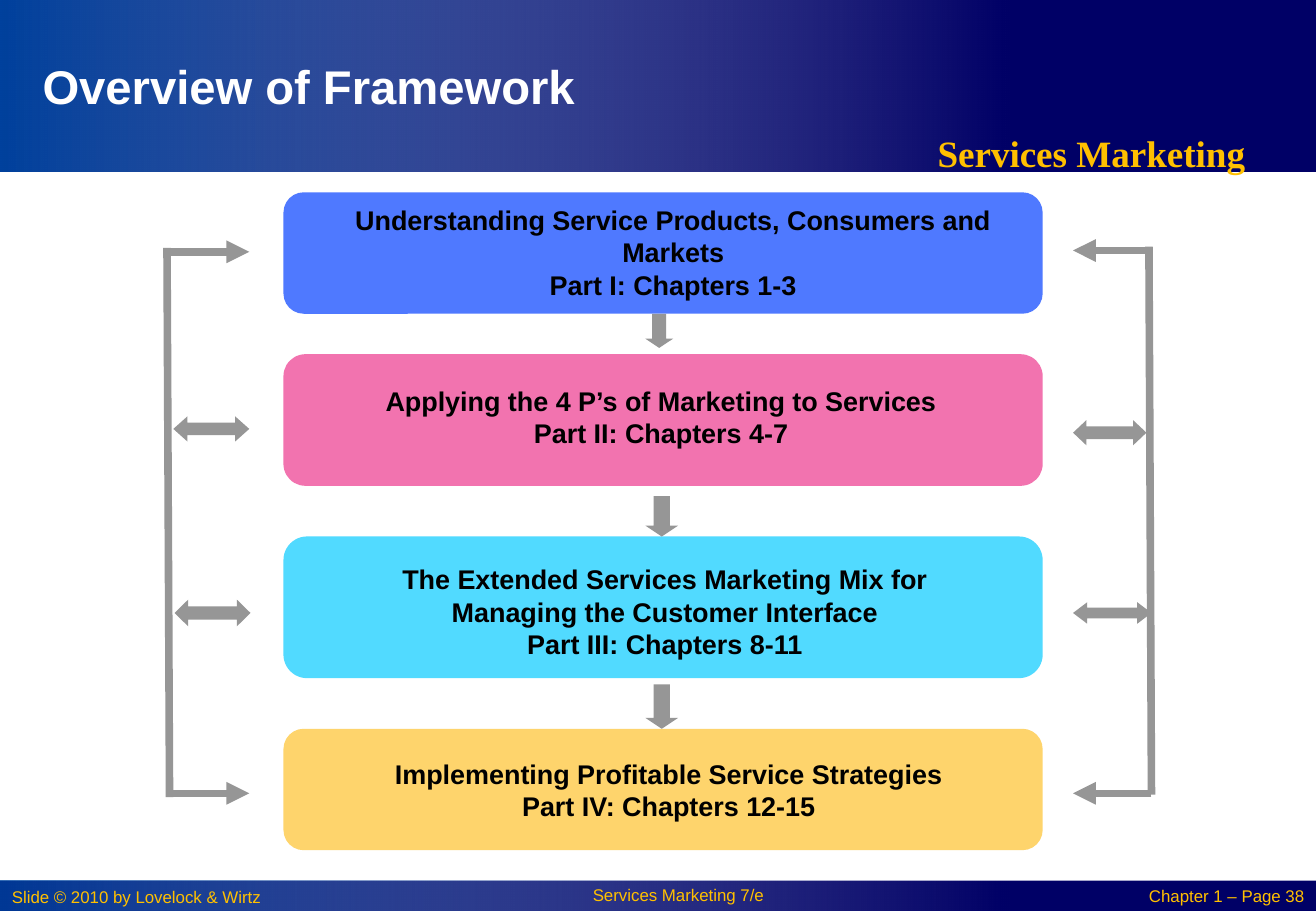
from lxml.etree import SubElement
from pptx import Presentation
from pptx.dml.color import RGBColor
from pptx.enum.shapes import MSO_CONNECTOR, MSO_SHAPE
from pptx.enum.text import MSO_ANCHOR, PP_ALIGN
from pptx.oxml.ns import qn
from pptx.util import Pt

PX = 9525
WIDTH, HEIGHT = 1040, 720
GREY, GOLD, NAVY, BLUE = "969696", "FFC000", "000066", "0152AB"
LEFT, CENTER, RIGHT = PP_ALIGN.LEFT, PP_ALIGN.CENTER, PP_ALIGN.RIGHT

TITLE = "Overview of Framework"
BRAND = "Services Marketing"
BANDS = [(696, 24, 69), (0, 136, 80)]
FOOTER = [
    ("Slide © 2010 by Lovelock & Wirtz", (0, 696, 248, 27), LEFT, 1),
    ("Services Marketing 7/e", (408, 696, 256, 24), CENTER, 0.9),
    ("Chapter 1 – Page 38", (872, 697, 168, 24), RIGHT, 0.9),
]
PARTS = [
    (152, 96, "4F79FF", (240, 156, 584, 87),
     ["Understanding Service Products, Consumers and Markets", "Part I: Chapters 1-3"]),
    (280, 104, "F273AF", (293, 299, 459, 61),
     ["Applying the 4 P’s of Marketing to Services", "Part II: Chapters 4-7"]),
    (424, 112, "51DAFF", (296, 440, 459, 87),
     ["The Extended Services Marketing Mix for Managing the Customer Interface",
      "Part III: Chapters 8-11"]),
    (576, 96, "FED46C", (244, 594, 569, 61),
     ["Implementing Profitable Service Strategies", "Part IV: Chapters 12-15"]),
]
DOWN = [(510, 248, 22, 27), (510, 392, 26, 32), (510, 541, 26, 35)]
DOUBLE = [
    ((848, 332, 58, 20), 0.53),
    ((848, 476, 62, 17), 0.66),
    ((138, 474, 60, 21), 0.51),
    ((137, 329, 60, 20), 0.56),
]
LINES = [
    ((135, 199, 197, 199), True),
    ((135, 627, 197, 627), True),
    ((910, 627, 848, 627), True),
    ((910, 198, 848, 198), True),
    ((132, 196, 134, 630), False),
    ((908, 195, 910, 628), False),
]


def color(code):
    """Turn a hex string into a colour."""
    return RGBColor.from_string(code)


def scale(nums):
    """Turn px lengths into EMU."""
    return [n * PX for n in nums]


def write(frame, lines, size=16, hue="000000", bold=False, font="Arial",
          align=CENTER, space=1, anchor=MSO_ANCHOR.TOP):
    """Fill a text frame with formatted paragraphs."""
    frame.word_wrap = True
    frame.vertical_anchor = anchor
    frame.text = "\n".join(lines)
    for para in frame.paragraphs:
        para.alignment = align
        para.line_spacing = space
        para.font.size = Pt(size)
        para.font.bold = bold
        para.font.name = font
        para.font.color.rgb = color(hue)


def label(slide, box, lines, **style):
    """Add a text box."""
    write(slide.shapes.add_textbox(*scale(box)).text_frame, lines, **style)


def block(slide, kind, box, hue, adjust=()):
    """Add a plain filled shape."""
    shape = slide.shapes.add_shape(kind, *scale(box))
    shape.shadow.inherit = False
    shape.fill.solid()
    shape.fill.fore_color.rgb = color(hue)
    shape.line.fill.background()
    for i, value in enumerate(adjust):
        shape.adjustments[i] = value
    return shape


def fade(shape, alpha):
    """Fade a shape from blue to clear, left to right."""
    shape.fill.gradient()
    shape.fill.gradient_angle = 0
    for stop, hue, part in zip(shape.fill.gradient_stops, (BLUE, "FFFFFF"), (alpha, 0)):
        stop.color.rgb = color(hue)
    for node, part in zip(shape.element.spPr.iter(qn("a:srgbClr")), (alpha, 0)):
        SubElement(node, qn("a:alpha"), val=str(part * 1000))


def link(slide, ends, arrow):
    """Add a grey line, with an arrowhead if asked."""
    wire = slide.shapes.add_connector(MSO_CONNECTOR.STRAIGHT, *scale(ends))
    wire.line.color.rgb = color(GREY)
    wire.line.width = Pt(4.5)
    if arrow:
        SubElement(wire.line._get_or_add_ln(), qn("a:tailEnd"), type="triangle")
    SubElement(wire.element.spPr, qn("a:effectLst"))


def main():
    """Build the slide."""
    deck = Presentation()
    deck.slide_width, deck.slide_height = scale((WIDTH, HEIGHT))
    slide = deck.slides.add_slide(deck.slide_layouts[5])
    for top, high, alpha in BANDS:
        block(slide, MSO_SHAPE.RECTANGLE, (0, top, WIDTH, high), NAVY)
        fade(block(slide, MSO_SHAPE.RECTANGLE, (0, top, 800, high), NAVY), alpha)

    title = slide.shapes.title
    title.left, title.top, title.width, title.height = scale((24, 24, 672, 88))
    write(title.text_frame, [TITLE], size=28, hue="FFFFFF", bold=True,
          align=LEFT, anchor=MSO_ANCHOR.MIDDLE)
    slide.shapes._spTree.append(title.element)
    label(slide, (672, 84, 381, 60), [BRAND], size=22, hue=GOLD, bold=True,
          font="Times New Roman", space=1.4)
    for text, box, align, space in FOOTER:
        label(slide, box, [text], size=10, hue=GOLD, align=align, space=space)

    for top, high, hue, box, lines in PARTS:
        block(slide, MSO_SHAPE.ROUNDED_RECTANGLE, (224, top, 600, high), hue)
        label(slide, box, lines, bold=True)
    for box in DOWN:
        block(slide, MSO_SHAPE.DOWN_ARROW, box, GREY, (0.5, 0.33))
    for box, head in DOUBLE:
        block(slide, MSO_SHAPE.LEFT_RIGHT_ARROW, box, GREY, (0.5, head))
    for ends, arrow in LINES:
        link(slide, ends, arrow)
    deck.save("out.pptx")


if __name__ == "__main__":
    main()
